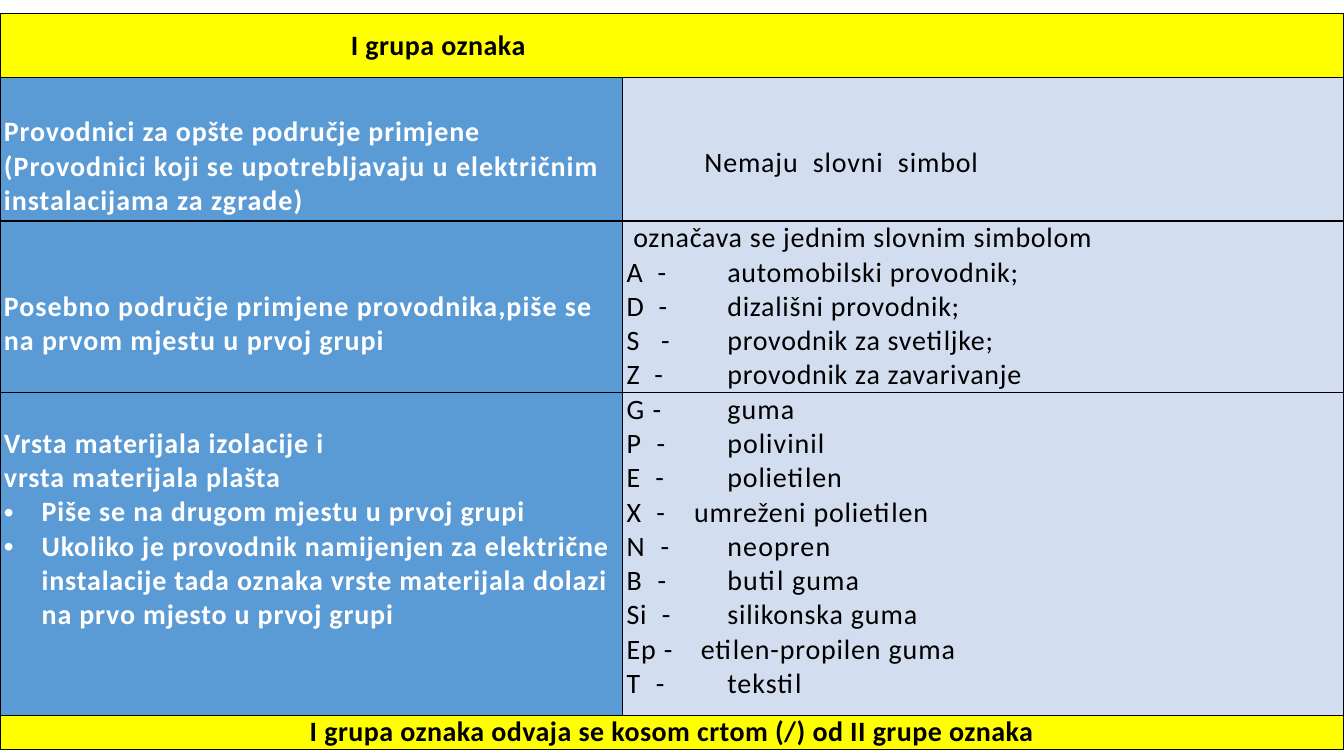
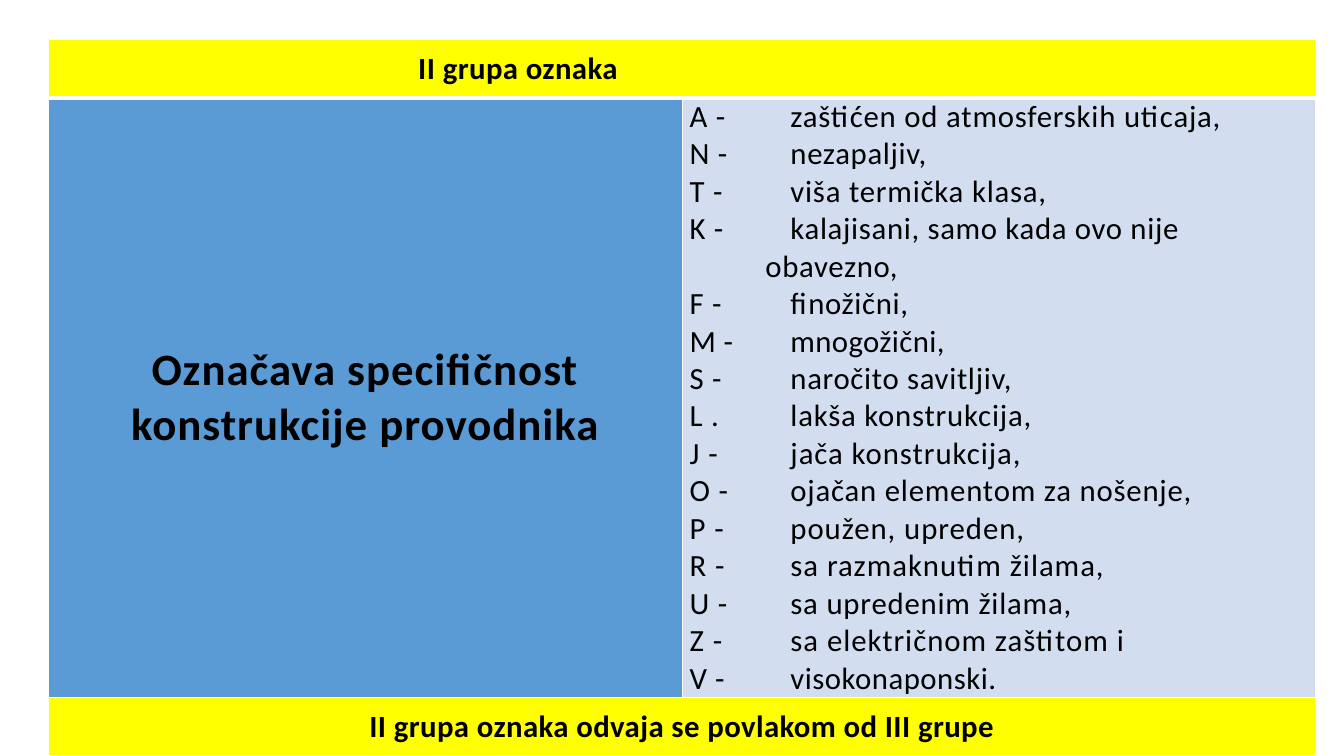
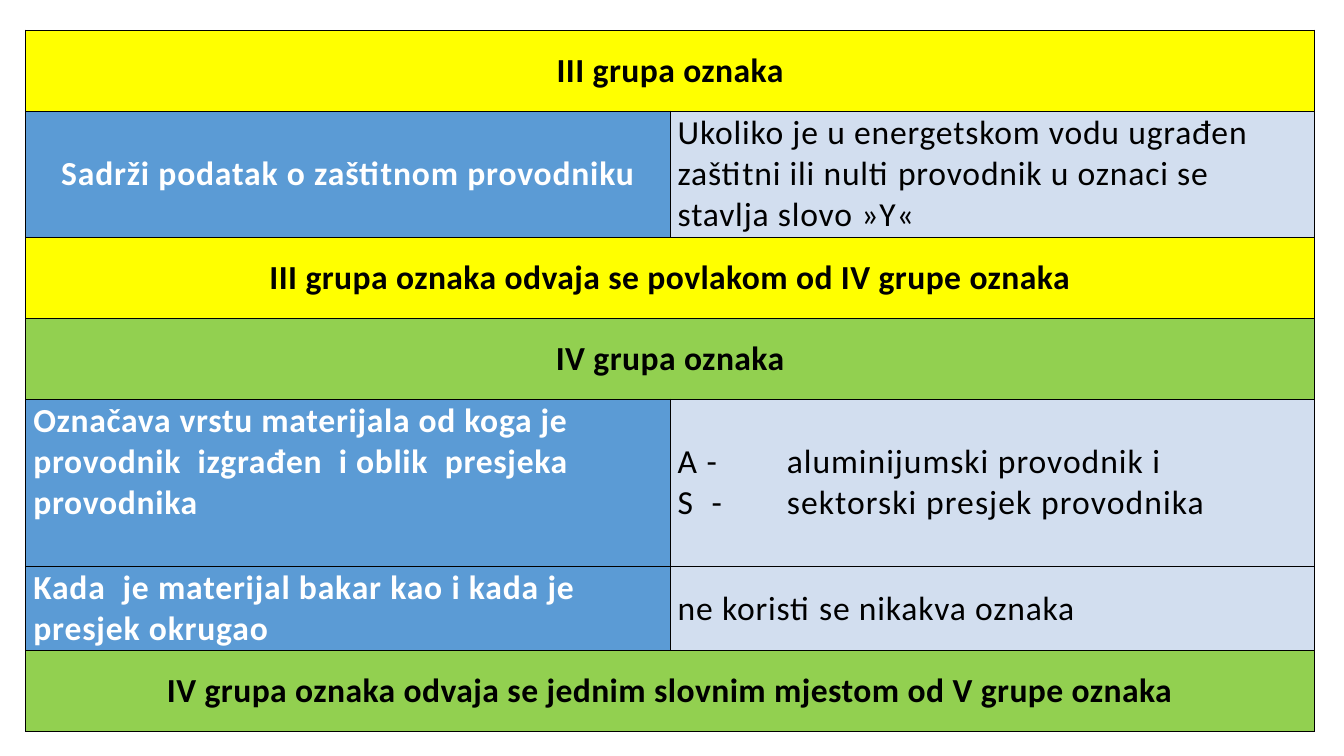
from dataclasses import dataclass

from lxml import etree
from pptx import Presentation
from pptx.dml.color import RGBColor
from pptx.enum.text import MSO_ANCHOR, PP_ALIGN
from pptx.oxml.ns import qn
from pptx.util import Cm, Pt

LEFT, CENTER = PP_ALIGN.LEFT, PP_ALIGN.CENTER
TOP, MIDDLE = MSO_ANCHOR.TOP, MSO_ANCHOR.MIDDLE

BLACK = RGBColor(0x00, 0x00, 0x00)
WHITE = RGBColor(0xFF, 0xFF, 0xFF)
YELLOW = RGBColor(0xFF, 0xFF, 0x00)
GREEN = RGBColor(0x92, 0xD0, 0x50)
BLUE = RGBColor(0x5B, 0x9B, 0xD5)
PALE_BLUE = RGBColor(0xD2, 0xDE, 0xEF)

FONT = "Calibri"
BLANK_LAYOUT = 6
DEFAULT_TAB = 2.54


@dataclass(frozen=True)
class Line:
    """One paragraph; spacing is in points, indent and tab in centimetres."""
    text: str
    spacing: float = 0.6
    indent: float = 0
    tab: float = DEFAULT_TAB
    bullet: bool = False


@dataclass(frozen=True)
class Block:
    """Content of one cell; gaps are in lines of its text."""
    lines: tuple[Line, ...]
    fill: RGBColor = PALE_BLUE
    color: RGBColor = BLACK
    bold: bool = False
    align: PP_ALIGN = LEFT
    anchor: MSO_ANCHOR = MIDDLE
    gap_above: int = 0
    gap_below: int = 0
    size: int = 0


@dataclass(frozen=True)
class Row:
    height: float
    blocks: tuple[Block, ...]


@dataclass(frozen=True)
class GroupTable:
    left: float
    top: float
    columns: tuple[float, float]
    rows: tuple[Row, ...]
    size: int
    side_margin: float
    border: RGBColor = BLACK
    header_rule: float = 1


def band(height: float, text: str, fill: RGBColor = YELLOW, indent: float = 0) -> Row:
    """Full-width row, centred unless an indent is given."""
    align = LEFT if indent else CENTER
    return Row(height, (Block((Line(text, 0.3, indent),), fill, bold=True, align=align),))


def label(*lines: Line, **options) -> Block:
    return Block(lines, **{"fill": BLUE, "color": WHITE, "bold": True, **options})


def codes(*lines: Line, **options) -> Block:
    return Block(lines, **options)


GROUP_ONE = GroupTable(
    left=0, top=0.34, columns=(15.69, 18.18), size=20, side_margin=0.1,
    rows=(
        band(1.62, "I grupa oznaka", indent=8.74),
        Row(3.61, (
            label(Line("Provodnici za opšte područje primjene"),
                  Line("(Provodnici koji se upotrebljavaju u električnim "
                       "instalacijama za zgrade)", 0.7),
                  gap_above=1),
            codes(Line("Nemaju  slovni  simbol", indent=1.96), anchor=TOP, gap_above=2),
        )),
        Row(4.06, (
            label(Line("Posebno područje primjene provodnika,piše se na prvom "
                       "mjestu u prvoj grupi", 0.7),
                  anchor=TOP, gap_above=2),
            codes(Line("označava se jednim slovnim simbolom", 0.5, indent=0.17),
                  Line("A  -\tautomobilski provodnik;", 0.5),
                  Line("D  -\tdizališni provodnik;", 0.5),
                  Line("S   -\tprovodnik za svetiljke;", 0.5),
                  Line("Z  -\tprovodnik za zavarivanje", 0.5),
                  anchor=TOP),
        )),
        Row(8.13, (
            label(Line("Vrsta materijala izolacije i"),
                  Line("vrsta materijala plašta"),
                  Line("Piše se na drugom mjestu u prvoj grupi", indent=0.95, bullet=True),
                  Line("Ukoliko je provodnik namijenjen za električne instalacije "
                       "tada oznaka vrste materijala dolazi na prvo mjesto u prvoj "
                       "grupi", indent=0.95, bullet=True),
                  anchor=TOP, gap_above=1),
            codes(Line("G -\tguma", 0.8),
                  Line("P  -\tpolivinil", 0.7),
                  Line("E  -\tpolietilen"),
                  Line("X  -\tumreženi polietilen", tab=1.7),
                  Line("N  -\tneopren", 0.8),
                  Line("B  -\tbutil guma", 0.8),
                  Line("Si  -\tsilikonska guma"),
                  Line("Ep -\tetilen-propilen guma", tab=1.87),
                  Line("T  -\ttekstil", 0.7),
                  anchor=TOP),
        )),
        band(0.82, "I grupa oznaka odvaja se kosom crtom (/) od II grupe oznaka"),
    ),
)

GROUP_TWO = GroupTable(
    left=1.22, top=1, columns=(15.97, 15.97), size=22, side_margin=0.19,
    border=WHITE, header_rule=3,
    rows=(
        band(1.47, "II grupa oznaka", indent=9.13),
        Row(14.5, (
            label(Line("Označava specifičnost konstrukcije provodnika", 0.7),
                  color=BLACK, align=CENTER, size=32),
            codes(Line("A -\tzaštićen od atmosferskih uticaja,"),
                  Line("N -\tnezapaljiv,", 0.5),
                  Line("T -\tviša termička klasa,"),
                  Line("K -\tkalajisani, samo kada ovo nije", 0.5),
                  Line("obavezno,", 0.5, indent=1.91),
                  Line("F -\tfinožični,", 0.5),
                  Line("M -\tmnogožični,", 0.3),
                  Line("S -\tnaročito savitljiv,", 0.5),
                  Line("L .\tlakša konstrukcija,"),
                  Line("J -\tjača konstrukcija,", 0.7),
                  Line("O -\tojačan elementom za nošenje,"),
                  Line("P -\tpoužen, upreden,", 0.7),
                  Line("R -\tsa razmaknutim žilama,", 0.7),
                  Line("U -\tsa upredenim žilama,"),
                  Line("Z -\tsa električnom zaštitom i", 0.7),
                  Line("V -\tvisokonaponski.", 0.4),
                  anchor=TOP),
        )),
        band(1.47, "II grupa oznaka odvaja se povlakom od III grupe"),
    ),
)

GROUPS_THREE_FOUR = GroupTable(
    left=0.65, top=0.76, columns=(16.24, 16.24), size=24, side_margin=0.19,
    rows=(
        band(2.04, "III grupa oznaka"),
        Row(3.18, (
            label(Line("Sadrži podatak o zaštitnom provodniku"), align=CENTER),
            codes(Line("Ukoliko je u energetskom vodu ugrađen zaštitni ili nulti "
                       "provodnik u oznaci se stavlja slovo »Y«")),
        )),
        band(2.04, "III grupa oznaka odvaja se povlakom od IV grupe oznaka"),
        band(2.04, "IV grupa oznaka", GREEN),
        Row(4.22, (
            label(Line("Označava vrstu materijala od koga je provodnik  izgrađen  "
                       "i oblik  presjeka  provodnika", 0.5), gap_below=1),
            codes(Line("A -\taluminijumski provodnik i", 0.7, tab=2.75),
                  Line("S  -\tsektorski presjek provodnika", 0.8, tab=2.75)),
        )),
        Row(2.12, (
            label(Line("Kada  je materijal bakar kao i kada je presjek okrugao")),
            codes(Line("ne koristi se nikakva oznaka")),
        )),
        band(2.04, "IV grupa oznaka odvaja se jednim slovnim mjestom od V grupe oznaka",
             GREEN),
    ),
)


def write_text(paragraph, text: str, *, size: int, color: RGBColor, bold: bool,
               spacing: float, align: PP_ALIGN) -> None:
    paragraph.alignment = align
    run = paragraph.add_run()
    run.text = text
    run.font.name = FONT
    run.font.size = Pt(size)
    run.font.bold = bold
    run.font.color.rgb = color
    run.font._element.set("spc", str(round(spacing * 100)))


def set_indents(paragraph, line: Line) -> None:
    """Set the left indent, hanging bullet and tab width of a line."""
    properties = paragraph._p.get_or_add_pPr()
    indent = Cm(line.indent)
    properties.set("marL", str(indent))
    properties.set("indent", str(-indent if line.bullet else 0))
    if line.bullet:
        etree.SubElement(properties, qn("a:buFont"), typeface="Arial")
        etree.SubElement(properties, qn("a:buChar"), char="•")
    if line.tab != DEFAULT_TAB:
        properties.set("defTabSz", str(Cm(line.tab)))


def set_default_tab(presentation) -> None:
    for root in (presentation.element, presentation.slide_master.element):
        for level in root.iter(qn("a:lvl1pPr")):
            level.set("defTabSz", str(Cm(DEFAULT_TAB)))


def set_borders(cell, color: RGBColor, top: float, bottom: float) -> None:
    properties = cell._tc.get_or_add_tcPr()
    widths = {"a:lnL": 1, "a:lnR": 1, "a:lnT": top, "a:lnB": bottom}
    for position, (tag, width) in enumerate(widths.items()):
        edge = etree.Element(qn(tag), w=str(Pt(width)))
        fill = etree.SubElement(edge, qn("a:solidFill"))
        etree.SubElement(fill, qn("a:srgbClr"), val=str(color))
        properties.insert(position, edge)


def fill_cell(cell, block: Block, group: GroupTable) -> None:
    size = block.size or group.size
    line_height = Pt(size * 1.22)
    cell.margin_left = cell.margin_right = Cm(group.side_margin)
    cell.margin_top = line_height * block.gap_above
    cell.margin_bottom = line_height * block.gap_below
    cell.vertical_anchor = block.anchor
    frame = cell.text_frame
    for index, line in enumerate(block.lines):
        paragraph = frame.add_paragraph() if index else frame.paragraphs[0]
        write_text(paragraph, line.text, size=size, color=block.color, bold=block.bold,
                   spacing=line.spacing, align=block.align)
        set_indents(paragraph, line)


def draw_group(slide, group: GroupTable) -> None:
    table = slide.shapes.add_table(
        len(group.rows), len(group.columns), Cm(group.left), Cm(group.top),
        Cm(sum(group.columns)), Cm(sum(row.height for row in group.rows))).table
    table.first_row = table.horz_banding = False
    for column, width in zip(table.columns, group.columns):
        column.width = Cm(width)
    for index, row in enumerate(group.rows):
        table.rows[index].height = Cm(row.height)
        cells = [table.cell(index, column) for column in range(len(group.columns))]
        if len(row.blocks) == 1:
            cells[0].merge(cells[-1])
        for cell, block in zip(cells, row.blocks):
            fill_cell(cell, block, group)
        for column, cell in enumerate(cells):
            cell.fill.solid()
            cell.fill.fore_color.rgb = row.blocks[min(column, len(row.blocks) - 1)].fill
            set_borders(cell, group.border,
                        top=group.header_rule if index == 1 else 1,
                        bottom=group.header_rule if index == 0 else 1)


def main() -> None:
    presentation = Presentation()
    presentation.slide_width = Cm(33.87)
    presentation.slide_height = Cm(19.05)
    set_default_tab(presentation)
    for group in (GROUP_ONE, GROUP_TWO, GROUPS_THREE_FOUR):
        slide = presentation.slides.add_slide(presentation.slide_layouts[BLANK_LAYOUT])
        draw_group(slide, group)
    presentation.save("out.pptx")


if __name__ == "__main__":
    main()
